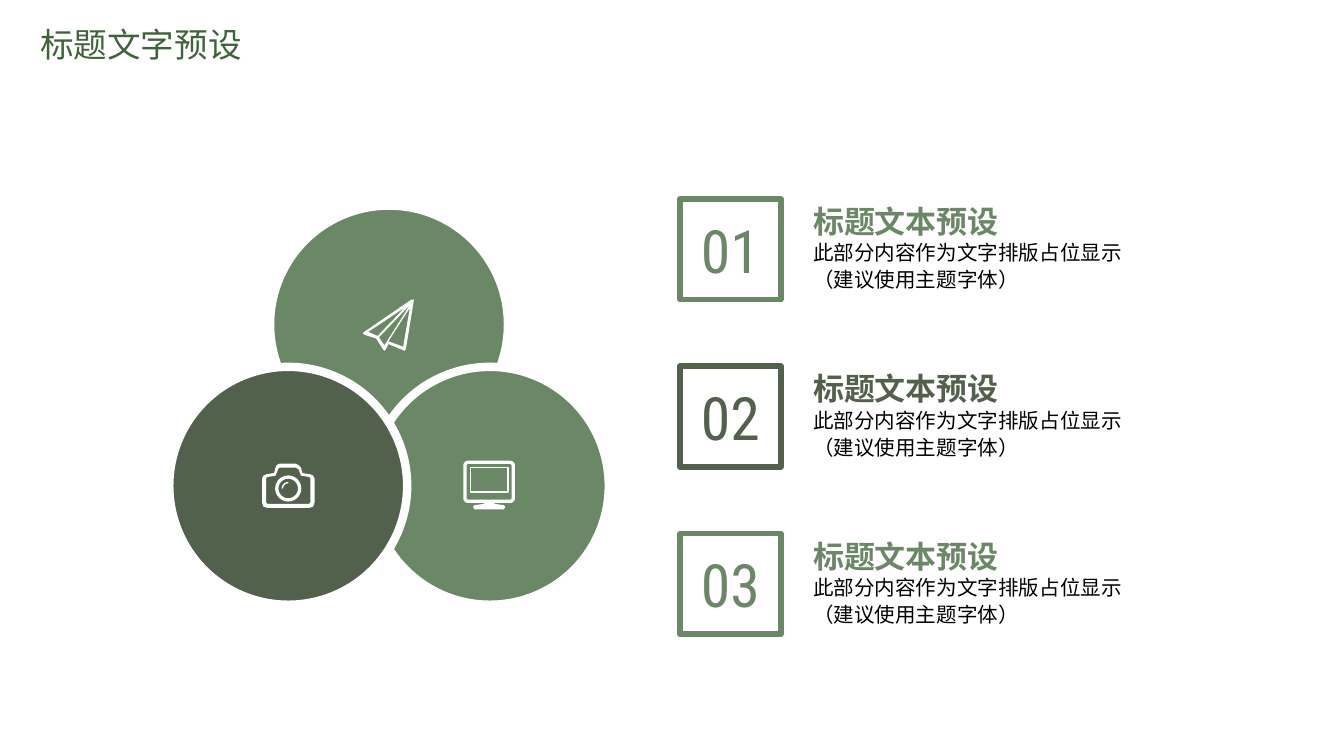
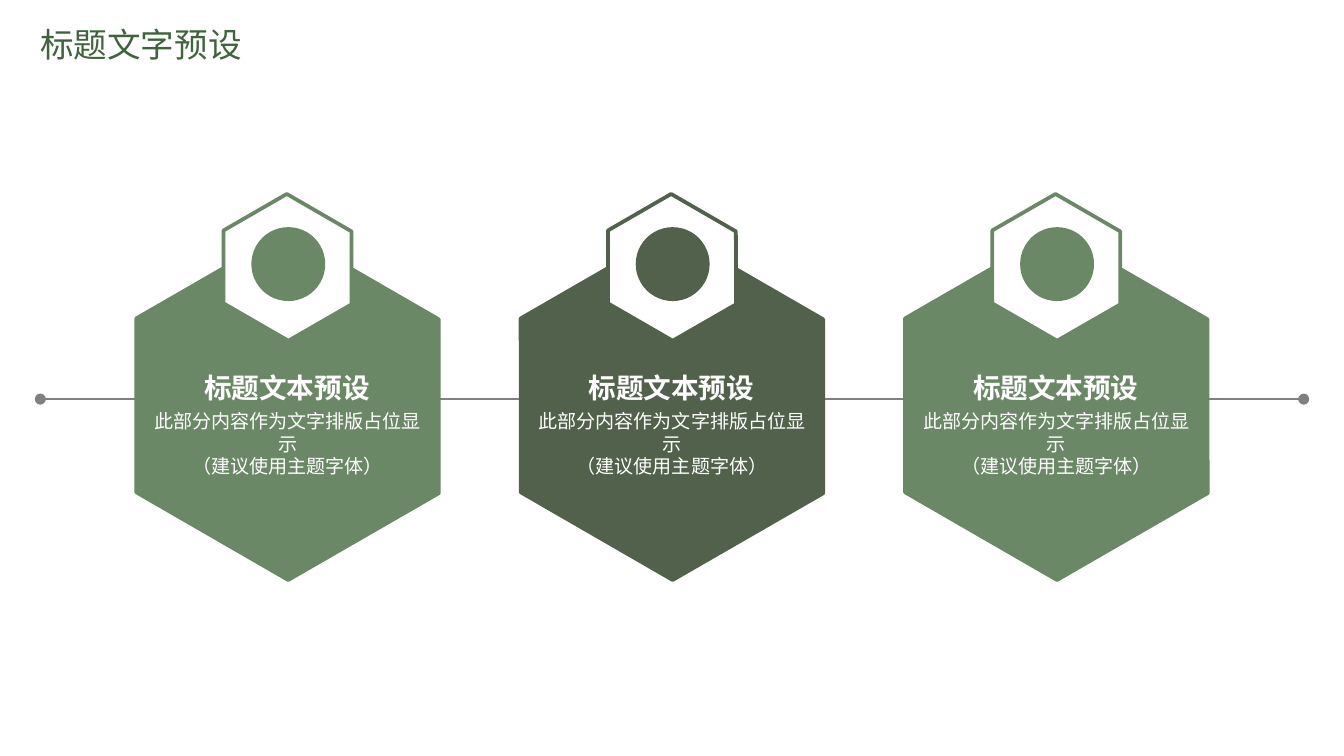
from dataclasses import dataclass

from lxml.etree import SubElement
from pptx import Presentation
from pptx.dml.color import RGBColor
from pptx.enum.shapes import MSO_CONNECTOR, MSO_SHAPE
from pptx.enum.text import MSO_ANCHOR, MSO_AUTO_SIZE, PP_ALIGN
from pptx.oxml.ns import qn
from pptx.util import Inches, Pt


@dataclass(frozen=True)
class Theme:
    green: str = "6B8866"
    dark: str = "51614B"
    title: str = "3D6539"
    grey: str = "808080"
    white: str = "FFFFFF"
    black: str = "000000"
    text_font: str = "Calibri"
    cjk_font: str = "Noto Sans CJK SC"
    number_font: str = "Roboto Condensed"
    title_size: float = 18
    number_size: float = 32
    heading_size: float = 16.6
    body_size: float = 11
    card_heading_size: float = 14.8
    card_body_size: float = 10.2


theme = Theme()
TITLE = "标题文字预设"
HEADING = "标题文本预设"
BODY = "此部分内容作为文字排版占位显示\n（建议使用主题字体）"
ITEM_COLORS = (theme.green, theme.dark, theme.green)


def style_shape(shape, fill=None, line=None, width=0):
    """Set fill and outline; None means there is none."""
    shape.shadow.inherit = False
    for part, color in ((shape.fill, fill), (shape.line.fill, line)):
        if color:
            part.solid()
            part.fore_color.rgb = RGBColor.from_string(color)
        else:
            part.background()
    if line:
        shape.line.width = Pt(width)
    return shape


def write_text(shape, text, size, color, font=theme.text_font, bold=False, align=PP_ALIGN.LEFT,
               anchor=MSO_ANCHOR.MIDDLE, wrap=True, insets=(0.1, 0.05)):
    """Write one paragraph into a shape or text box."""
    frame = shape.text_frame
    frame.word_wrap = wrap
    frame.vertical_anchor = anchor
    frame.margin_left = frame.margin_right = Inches(insets[0])
    frame.margin_top = frame.margin_bottom = Inches(insets[1])
    paragraph = frame.paragraphs[0]
    paragraph.text = text
    paragraph.alignment = align
    paragraph.font.name = font
    paragraph.font.size = Pt(size)
    paragraph.font.bold = bold
    paragraph.font.color.rgb = RGBColor.from_string(color)
    properties = paragraph._p.pPr.find(qn("a:defRPr"))
    SubElement(properties, qn("a:ea"), typeface=theme.cjk_font)
    return paragraph


presentation = Presentation()
presentation.slide_width = Inches(10)
presentation.slide_height = Inches(5.625)

# Both slides carry the same title
slides = []
for _ in range(2):
    slide = presentation.slides.add_slide(presentation.slide_layouts[6])
    title = slide.shapes.add_textbox(Inches(0.2), Inches(0.13), Inches(2.34), Inches(0.4))
    write_text(title, TITLE, theme.title_size, theme.title, theme.cjk_font, anchor=MSO_ANCHOR.TOP)
    title.text_frame.auto_size = MSO_AUTO_SIZE.SHAPE_TO_FIT_TEXT
    slides.append(slide)
circle_slide, hexagon_slide = slides

# Slide 1: three overlapping circles
shapes = circle_slide.shapes
for left, top, color in ((2.01, 1.53, theme.green), (2.76, 2.73, theme.green), (1.26, 2.73, theme.dark)):
    circle = shapes.add_shape(MSO_SHAPE.OVAL, Inches(left), Inches(top), Inches(1.77), Inches(1.77))
    style_shape(circle, color, theme.white, 4.5)

# Icon outlines: paper plane, monitor stand, camera body
plane = [
    [(3.08, 2.23), (3.06, 2.23), (2.71, 2.47), (2.7, 2.48), (2.71, 2.49), (2.8, 2.52), (2.85, 2.6),
     (2.86, 2.61), (2.87, 2.6), (2.89, 2.56), (3.01, 2.61), (3.02, 2.6)],
    [(3, 2.58), (2.89, 2.54), (3.05, 2.29)],
    [(2.82, 2.51), (3.05, 2.27), (2.86, 2.57)],
    [(2.74, 2.47), (3.01, 2.29), (2.81, 2.5)],
]
stand = [[(3.6, 3.73), (3.68, 3.73), (3.68, 3.75), (3.75, 3.76), (3.76, 3.77), (3.75, 3.79),
          (3.53, 3.79), (3.52, 3.77), (3.53, 3.76), (3.6, 3.75)]]
camera = [
    [(2.31, 3.53), (2.25, 3.52), (2.24, 3.48), (2.22, 3.46), (2.2, 3.45), (2.08, 3.45), (2.06, 3.46),
     (2.05, 3.48), (2.04, 3.52), (1.98, 3.53), (1.96, 3.54), (1.95, 3.56), (1.95, 3.74), (1.96, 3.77),
     (1.99, 3.78), (2.3, 3.78), (2.33, 3.77), (2.34, 3.74), (2.34, 3.56), (2.33, 3.54)],
    [(2.31, 3.74), (2.3, 3.75), (1.99, 3.75), (1.98, 3.74), (1.98, 3.56), (1.99, 3.55), (2.05, 3.54),
     (2.07, 3.49), (2.08, 3.48), (2.2, 3.48), (2.22, 3.49), (2.24, 3.54), (2.3, 3.55), (2.31, 3.56)],
]
for outline in (plane, stand, camera):
    contours = [[(Inches(x), Inches(y)) for x, y in contour] for contour in outline]
    builder = shapes.build_freeform(*contours[0][0], scale=1.0)
    for contour in contours:
        if contour is not contours[0]:
            builder.move_to(*contour[0])
        builder.add_line_segments(contour[1:], close=True)
    style_shape(builder.convert_to_shape(), theme.white)

# Monitor frame and screen, camera lens and glint
for kind, left, top, width, height, line in (
    (MSO_SHAPE.ROUNDED_RECTANGLE, 3.46, 3.44, 0.36, 0.29, 1.75),
    (MSO_SHAPE.RECTANGLE, 3.5, 3.48, 0.28, 0.18, 0.75),
    (MSO_SHAPE.OVAL, 2.06, 3.55, 0.17, 0.17, 1.75),
    (MSO_SHAPE.ARC, 2.1, 3.59, 0.09, 0.09, 0.75),
):
    detail = shapes.add_shape(kind, Inches(left), Inches(top), Inches(width), Inches(height))
    style_shape(detail, None, theme.white, line)
    if kind == MSO_SHAPE.ROUNDED_RECTANGLE:
        detail.adjustments[0] = 0.08
    if kind == MSO_SHAPE.ARC:
        detail.rotation = 270

# Numbered list
for index, color in enumerate(ITEM_COLORS):
    top = 1.48 + 1.245 * index
    number = shapes.add_shape(MSO_SHAPE.RECTANGLE, Inches(5.06), Inches(top), Inches(0.75), Inches(0.75))
    style_shape(number, None, color, 3)
    write_text(number, f"{index + 1:02}", theme.number_size, color, theme.number_font,
               align=PP_ALIGN.CENTER, wrap=False)
    heading = shapes.add_textbox(Inches(5.81), Inches(top + 0.05), Inches(3.38), Inches(0.23))
    write_text(heading, HEADING, theme.heading_size, color, bold=True, wrap=False, insets=(0.24, 0))
    body = shapes.add_textbox(Inches(5.81), Inches(top + 0.28), Inches(3.38), Inches(0.42))
    paragraph = write_text(body, BODY, theme.body_size, theme.black, insets=(0.24, 0))
    paragraph.line_spacing = 1.1

# Slide 2: line behind the cards, with round ends
shapes = hexagon_slide.shapes
axis = shapes.add_connector(MSO_CONNECTOR.STRAIGHT, Inches(0.3), Inches(2.97), Inches(9.7), Inches(2.97))
axis.line.color.rgb = RGBColor.from_string(theme.grey)
axis.line.width = Pt(1)
axis_properties = axis._element.spPr
for end in ("a:headEnd", "a:tailEnd"):
    SubElement(axis_properties.find(qn("a:ln")), qn(end), type="oval")
SubElement(axis_properties, qn("a:effectLst"))

# Hexagon cards, each with a badge
for index, color in enumerate(ITEM_COLORS):
    left = 0.84 + 2.86 * index
    for offset, top, width, height, fill in (
        (0, 1.9, 2.6, 2.24, color),
        (0.75, 1.52, 1.1, 0.94, theme.white),
    ):
        hexagon = shapes.add_shape(MSO_SHAPE.HEXAGON, Inches(left + offset), Inches(top),
                                   Inches(width), Inches(height))
        hexagon.adjustments[0] = 0.289
        hexagon.rotation = 30
        style_shape(hexagon, fill, color, 2)
    badge = shapes.add_shape(MSO_SHAPE.OVAL, Inches(left + 1.03), Inches(1.69), Inches(0.55), Inches(0.55))
    style_shape(badge, color)
    heading = shapes.add_textbox(Inches(left + 0.17), Inches(2.77), Inches(2.25), Inches(0.23))
    write_text(heading, HEADING, theme.card_heading_size, theme.white, bold=True,
               align=PP_ALIGN.CENTER, wrap=False, insets=(0, 0))
    body = shapes.add_textbox(Inches(left + 0.17), Inches(3), Inches(2.26), Inches(0.6))
    write_text(body, BODY, theme.card_body_size, theme.white, align=PP_ALIGN.CENTER)

presentation.save("out.pptx")
